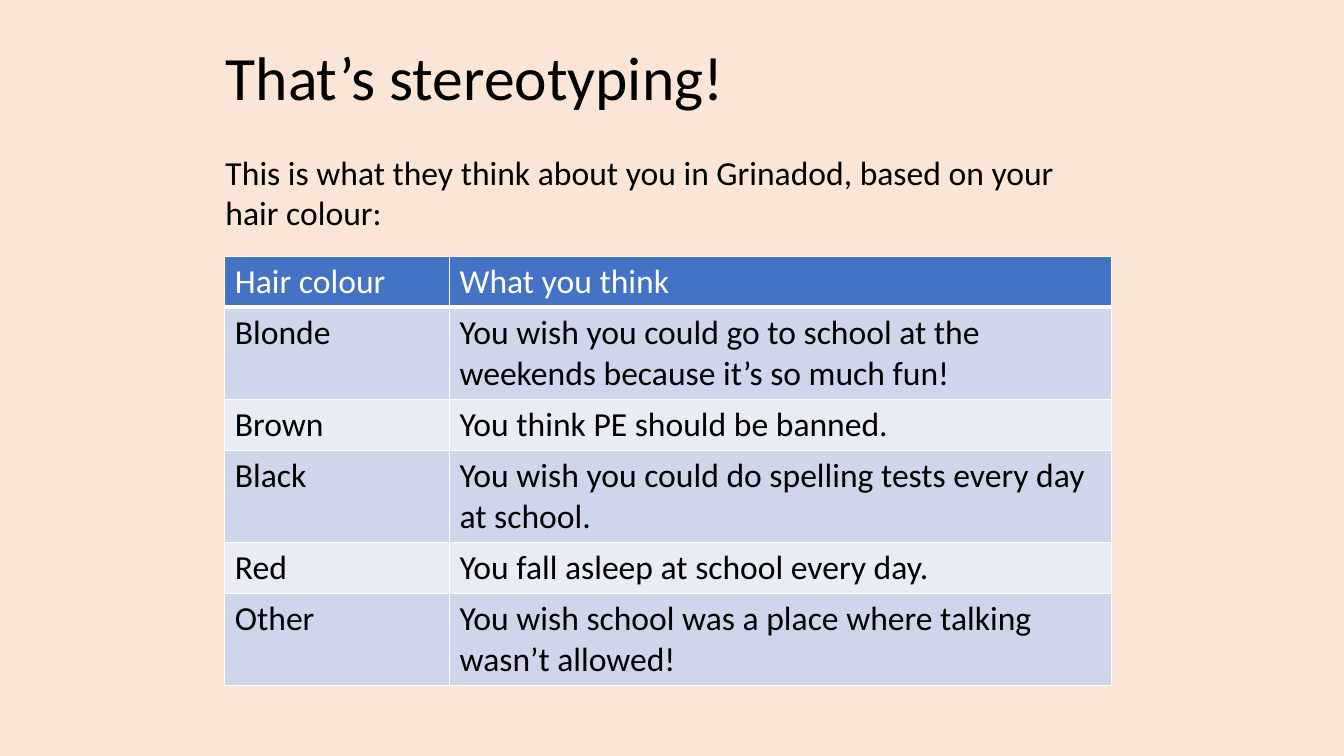
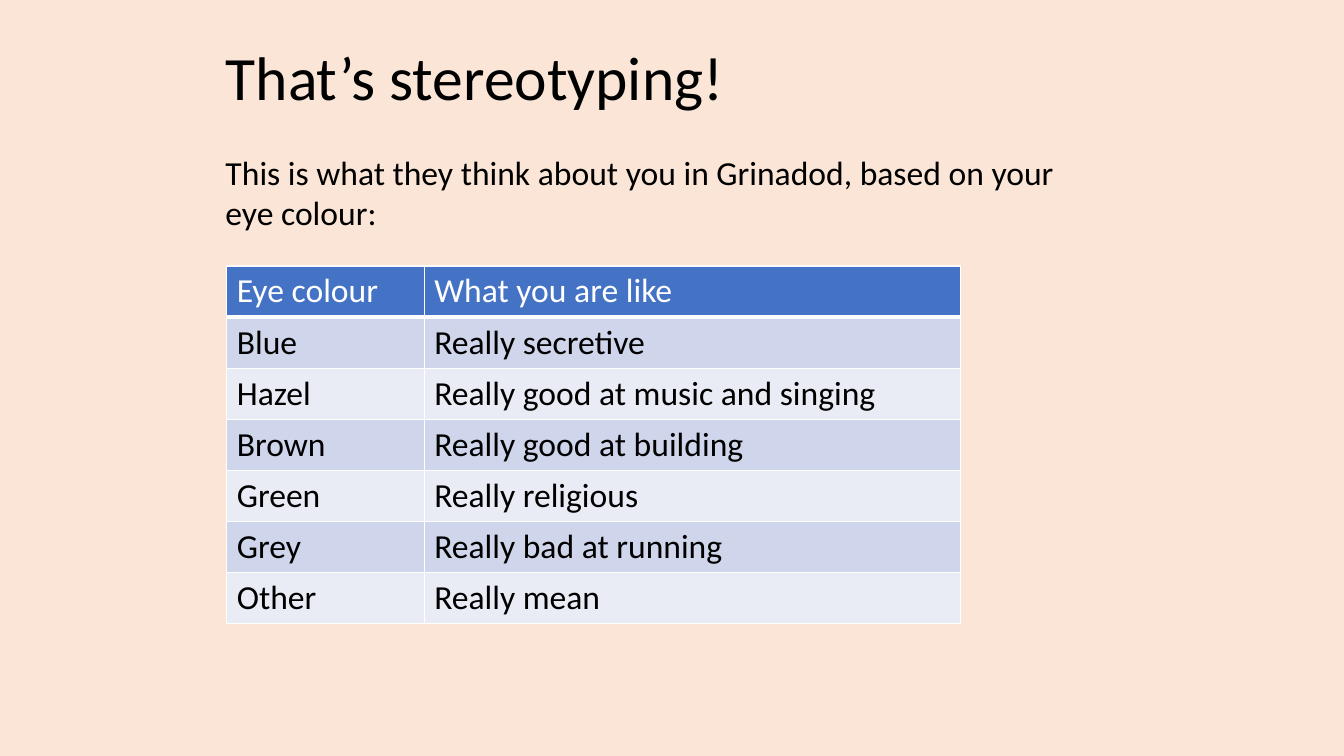
from dataclasses import dataclass

from lxml.etree import SubElement
from pptx import Presentation
from pptx.dml.color import RGBColor
from pptx.enum.text import MSO_ANCHOR, MSO_AUTO_SIZE, PP_ALIGN
from pptx.oxml.ns import qn
from pptx.util import Pt


@dataclass(frozen=True)
class Theme:
    """Colours, font and type sizes of the deck."""

    page: str = "FBE5D6"
    ink: str = "000000"
    white: str = "FFFFFF"
    head: str = "4472C4"
    bands: tuple = ("CFD5EA", "E9EBF5")
    font: str = "Calibri"
    title: int = 44
    body: int = 24


THEME = Theme()
TITLE = "That’s stereotyping!"
INTRO = "This is what they think about you in Grinadod, based on your {} colour:"
TITLE_BOX = (154, 21.6, 648, 65.5)
ROW = 29.5

HAIR = (
    ("Hair colour", "What you think"),
    ("Blonde", "You wish you could go to school at the weekends because it’s so much fun!"),
    ("Brown", "You think PE should be banned."),
    ("Black", "You wish you could do spelling tests every day at school."),
    ("Red", "You fall asleep at school every day."),
    ("Other", "You wish school was a place where talking wasn’t allowed!"),
)
EYES = (
    ("Eye colour", "What you are like"),
    ("Blue", "Really secretive"),
    ("Hazel", "Really good at music and singing"),
    ("Brown", "Really good at building"),
    ("Green", "Really religious"),
    ("Grey", "Really bad at running"),
    ("Other", "Really mean"),
)


def write(frame, text, size=THEME.body, color=THEME.ink, after=0, anchor=MSO_ANCHOR.TOP):
    """Put one formatted paragraph into a text frame."""
    frame.word_wrap = True
    frame.vertical_anchor = anchor
    para = frame.paragraphs[0]
    para.alignment = PP_ALIGN.LEFT
    para.space_after = Pt(after)
    run = para.add_run()
    run.text = text
    font = run.font
    font.name, font.size, font.bold = THEME.font, Pt(size), False
    font.color.rgb = RGBColor.from_string(color)


def rule(cell, base):
    """Draw white lines round a cell, with the given width below."""
    props = cell._tc.get_or_add_tcPr()
    for side, width in zip("LRTB", (1, 1, 1, base)):
        line = SubElement(props, qn(f"a:ln{side}"), w=str(Pt(width)))
        fill = SubElement(line, qn("a:solidFill"))
        SubElement(fill, qn("a:srgbClr"), val=THEME.white)


def add_title(slide, box):
    """Place and format the slide title."""
    title = slide.shapes.title
    title.left, title.top, title.width, title.height = map(Pt, box)
    write(title.text_frame, TITLE, size=THEME.title, after=20, anchor=MSO_ANCHOR.MIDDLE)


def add_intro(slide, topic, box):
    """Place the sentence above the table."""
    frame = slide.shapes.add_textbox(*map(Pt, box)).text_frame
    write(frame, INTRO.format(topic), after=5)
    frame.auto_size = MSO_AUTO_SIZE.SHAPE_TO_FIT_TEXT


def add_grid(slide, rows, left, top, widths):
    """Place a banded table with a header row."""
    box = (left, top, sum(widths), ROW * len(rows))
    grid = slide.shapes.add_table(len(rows), len(widths), *map(Pt, box)).table
    for col, width in zip(grid.columns, widths):
        col.width = Pt(width)
    for i, texts in enumerate(rows):
        grid.rows[i].height = Pt(ROW)
        fill = THEME.bands[(i - 1) % 2] if i else THEME.head
        color = THEME.ink if i else THEME.white
        for j, text in enumerate(texts):
            cell = grid.cell(i, j)
            rule(cell, 1 if i else 3)
            cell.fill.solid()
            cell.fill.fore_color.rgb = RGBColor.from_string(fill)
            write(cell.text_frame, text, color=color)


def add_page(deck, topic, span, rows, left, top, widths):
    """Build one slide with title, intro and table."""
    slide = deck.slides.add_slide(deck.slide_layouts[5])
    add_grid(slide, rows, left, top, widths)
    add_intro(slide, topic, (154, 105, span, 65.5))
    add_title(slide, TITLE_BOX)


def main():
    """Build and save the deck."""
    deck = Presentation()
    deck.slide_width, deck.slide_height = Pt(960), Pt(540)
    back = deck.slide_master.background.fill
    back.solid()
    back.fore_color.rgb = RGBColor.from_string(THEME.page)
    add_page(deck, "hair", 623, HAIR, 160.6, 183, (160.5, 473))
    add_page(deck, "eye", 615, EYES, 162, 190, (141, 383))
    deck.save("out.pptx")


if __name__ == "__main__":
    main()
